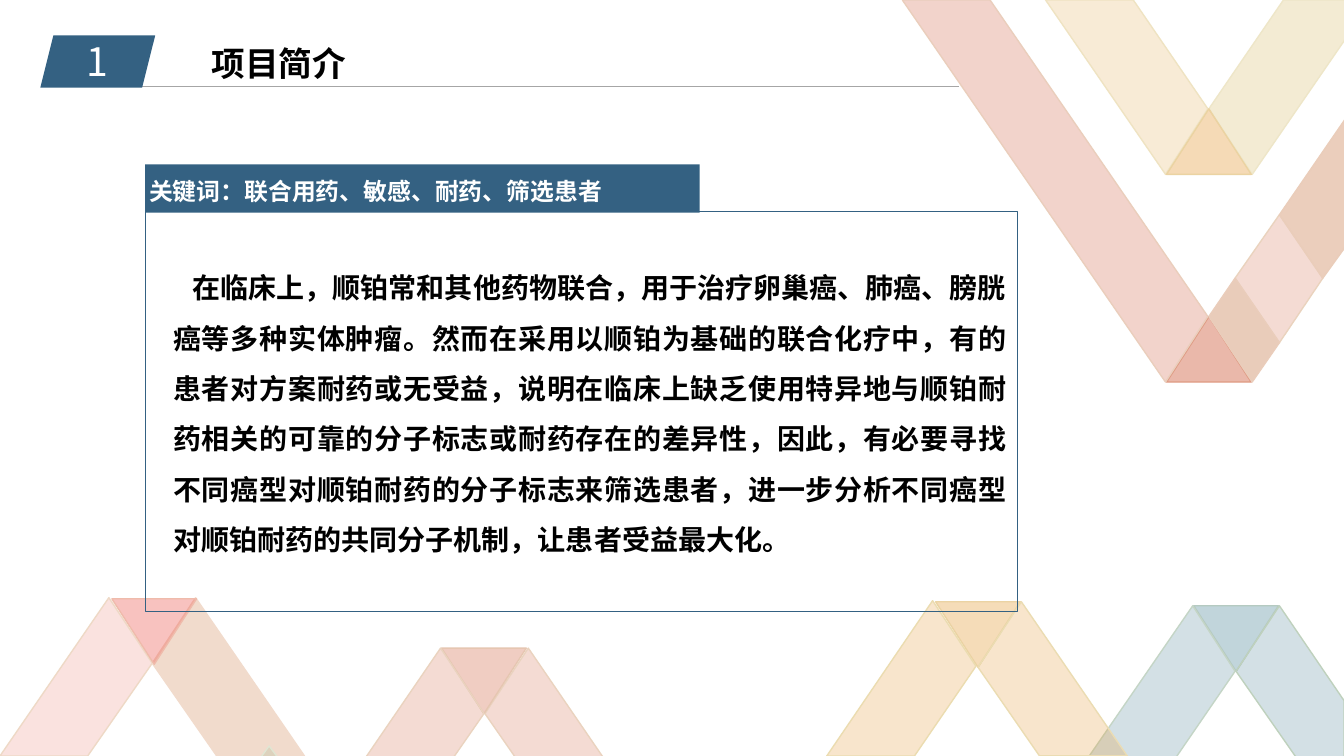
from lxml.etree import SubElement
from pptx import Presentation
from pptx.dml.color import RGBColor
from pptx.enum.shapes import MSO_CONNECTOR as Connector, MSO_SHAPE as Shape
from pptx.enum.text import MSO_ANCHOR as Anchor, MSO_AUTO_SIZE as AutoSize, PP_ALIGN as Align
from pptx.oxml.ns import qn
from pptx.util import Inches, Pt

COLORS = {
    "navy": "346182", "white": "FFFFFF", "black": "000000", "rule": "A6A6A6",
    "coral": "EE8F82", "red": "ED5249", "rust": "D57053", "amber": "E49B35",
    "gold": "E7B05E", "cream": "EFE3C2", "teal": "508799", "sage": "A2B894",
    "sand": "F1DBCC", "clay": "EBCEBC", "tan": "E9CCBA",
}
FONT = "Noto Sans CJK SC"
FOLD_WIDTH, FOLD_HEIGHT = 0.84, 0.65


def fold_down(left, top):
    """Corners of a ribbon fold whose tip points down."""
    return [(left, top), (left + FOLD_WIDTH, top), (left + FOLD_WIDTH / 2, top + FOLD_HEIGHT)]


def fold_up(left, top):
    """Corners of a ribbon fold whose tip points up."""
    base = top + FOLD_HEIGHT
    return [(left + FOLD_WIDTH / 2, top), (left + FOLD_WIDTH, base), (left, base)]


# corners, fill, opacity in percent, outline
RIBBONS = [
    ([(1.08, 5.93), (1.51, 6.58), (0.87, 7.5), (0, 7.5)], "coral", 25, "EED9C6"),
    ([(1.94, 5.93), (3.02, 7.5), (2.15, 7.5), (1.51, 6.58)], "sand", 100, "F1DBCC"),
    (fold_up(11.57, 3.14), "rust", 49, "DF9B83"),
    ([(10.37, 0), (11.24, 0), (11.98, 1.08), (11.56, 1.73)], "gold", 25, "EFE3C2"),
    ([(12.73, 0), (13.35, 0), (13.35, 0.38), (12.42, 1.73), (11.99, 1.08)], "cream", 71, "EEE6C8"),
    ([(12.69, 2.13), (13.12, 2.76), (12.69, 3.4), (12.25, 2.76)], "rust", 25, "EAD3BE"),
    ([(13.35, 1.17), (13.35, 2.44), (13.12, 2.76), (12.69, 2.13)], "clay", 100, "EACDBA"),
    ([(12.25, 2.76), (12.69, 3.4), (12.42, 3.79), (11.99, 3.14)], "tan", 100, "EACDBB"),
    (fold_up(11.57, 1.08), "amber", 36, "EBD3A2"),
    ([(2.67, 7.4), (2.78, 7.55), (2.56, 7.55)], "sage", 25, "E0E6D3"),
    ([(5.24, 6.43), (6, 7.54), (5.13, 7.54), (4.81, 7.08)], "rust", 25, "EAD3BF"),
    (fold_down(4.38, 6.43), "rust", 35, "E6C6B1"),
    (fold_down(11.84, 6.01), "teal", 35, "B5CAC1"),
    ([(11.83, 6.01), (12.25, 6.66), (11.66, 7.52), (10.79, 7.52)], "teal", 25, "C4D5C6"),
    ([(12.69, 6.01), (13.33, 6.95), (13.33, 7.52), (12.86, 7.52), (12.26, 6.66)],
     "teal", 25, "BFD1BD"),
    (fold_down(9.28, 5.97), "amber", 35, "EBD3A3"),
    ([(9.25, 5.96), (9.68, 6.61), (9.07, 7.5), (8.2, 7.5)], "amber", 25, "EBDCB0"),
    ([(10.13, 5.97), (11.18, 7.5), (10.31, 7.5), (9.7, 6.62)], "amber", 25, "EBDCB2"),
    ([(4.37, 6.43), (4.8, 7.08), (4.48, 7.54), (3.61, 7.54)], "rust", 25, "EAD3BF"),
    ([(8.95, 0), (9.82, 0), (11.98, 3.14), (11.56, 3.79)], "rust", 30, "EACEBC"),
    (fold_down(1.11, 5.94), "red", 35, "EFBBAB"),
]

SUMMARY = (
    "在临床上，顺铂常和其他药物联合，用于治疗卵巢癌、肺癌、膀胱癌等多种实体肿瘤。"
    "然而在采用以顺铂为基础的联合化疗中，有的患者对方案耐药或无受益，"
    "说明在临床上缺乏使用特异地与顺铂耐药相关的可靠的分子标志或耐药存在的差异性，"
    "因此，有必要寻找不同癌型对顺铂耐药的分子标志来筛选患者，"
    "进一步分析不同癌型对顺铂耐药的共同分子机制，让患者受益最大化。"
)


class SlideBuilder:
    def __init__(self, page):
        self.page = page

    def paint(self, shape, fill=None, line=None):
        shape.shadow.inherit = False
        if fill:
            shape.fill.solid()
            shape.fill.fore_color.rgb = RGBColor.from_string(COLORS[fill])
        else:
            shape.fill.background()
        if line:
            shape.line.color.rgb = RGBColor.from_string(line)
            shape.line.width = Pt(1)
        else:
            shape.line.fill.background()

    def ribbon(self, corners, fill, opacity, outline):
        points = [(Inches(x), Inches(y)) for x, y in corners]
        builder = self.page.shapes.build_freeform(*points[0])
        builder.add_line_segments(points[1:], close=True)
        shape = builder.convert_to_shape()
        self.paint(shape, fill, outline)
        if opacity < 100:
            color = shape.fill._xPr.find(qn("a:solidFill"))[0]
            SubElement(color, qn("a:alpha"), val=str(opacity * 1000))

    def shape(self, kind, left, top, width, height, fill=None, line=None):
        shape = self.page.shapes.add_shape(
            kind, Inches(left), Inches(top), Inches(width), Inches(height))
        self.paint(shape, fill, line)

    def rule(self, left, right, y):
        line = self.page.shapes.add_connector(
            Connector.STRAIGHT, Inches(left), Inches(y), Inches(right), Inches(y))
        line.line.color.rgb = RGBColor.from_string(COLORS["rule"])
        line.line.width = Pt(0.5)
        SubElement(line._element.spPr, qn("a:effectLst"))

    def text(self, words, left, top, width, height, size, color="black", bold=True,
             align=Align.LEFT, anchor=Anchor.TOP, wrap=True, spacing=1.0, indent=0):
        box = self.page.shapes.add_textbox(
            Inches(left), Inches(top), Inches(width), Inches(height))
        frame = box.text_frame
        frame.text = words
        frame.word_wrap = wrap
        frame.auto_size = AutoSize.SHAPE_TO_FIT_TEXT
        frame.vertical_anchor = anchor
        para = frame.paragraphs[0]
        para.alignment = align
        para.line_spacing = spacing
        if indent:
            para._p.get_or_add_pPr().set("indent", str(Inches(indent)))
        span = para.runs[0]
        span.font.size = Pt(size)
        span.font.bold = bold
        span.font.name = FONT
        span.font.color.rgb = RGBColor.from_string(COLORS[color])
        SubElement(span.font._element, qn("a:ea"), typeface=FONT)


def main():
    deck = Presentation()
    deck.slide_width, deck.slide_height = Inches(13.33), Inches(7.5)
    slide = SlideBuilder(deck.slides.add_slide(deck.slide_layouts[6]))

    for ribbon in RIBBONS:
        slide.ribbon(*ribbon)

    slide.rule(0.87, 9.51, 0.86)
    slide.shape(Shape.PARALLELOGRAM, 0.4, 0.35, 1.14, 0.52, fill="navy")
    slide.text("1", 0.41, 0.32, 1.12, 0.57, 28, "white", bold=False, align=Align.CENTER)
    slide.text("项目简介", 2, 0.38, 1.55, 0.5, 24, wrap=False)

    slide.shape(Shape.RECTANGLE, 1.44, 2.1, 8.65, 3.97, line=COLORS["navy"])
    slide.shape(Shape.RECTANGLE, 1.44, 1.63, 5.5, 0.48, fill="navy")
    slide.text("关键词：联合用药、敏感、耐药、筛选患者", 1.38, 1.7, 5.17, 0.39, 17, "white",
               anchor=Anchor.MIDDLE)
    slide.text(SUMMARY, 1.62, 2.47, 8.46, 3.13, 20,
               align=Align.JUSTIFY, spacing=1.5, indent=0.19)

    deck.save("out.pptx")


if __name__ == "__main__":
    main()
